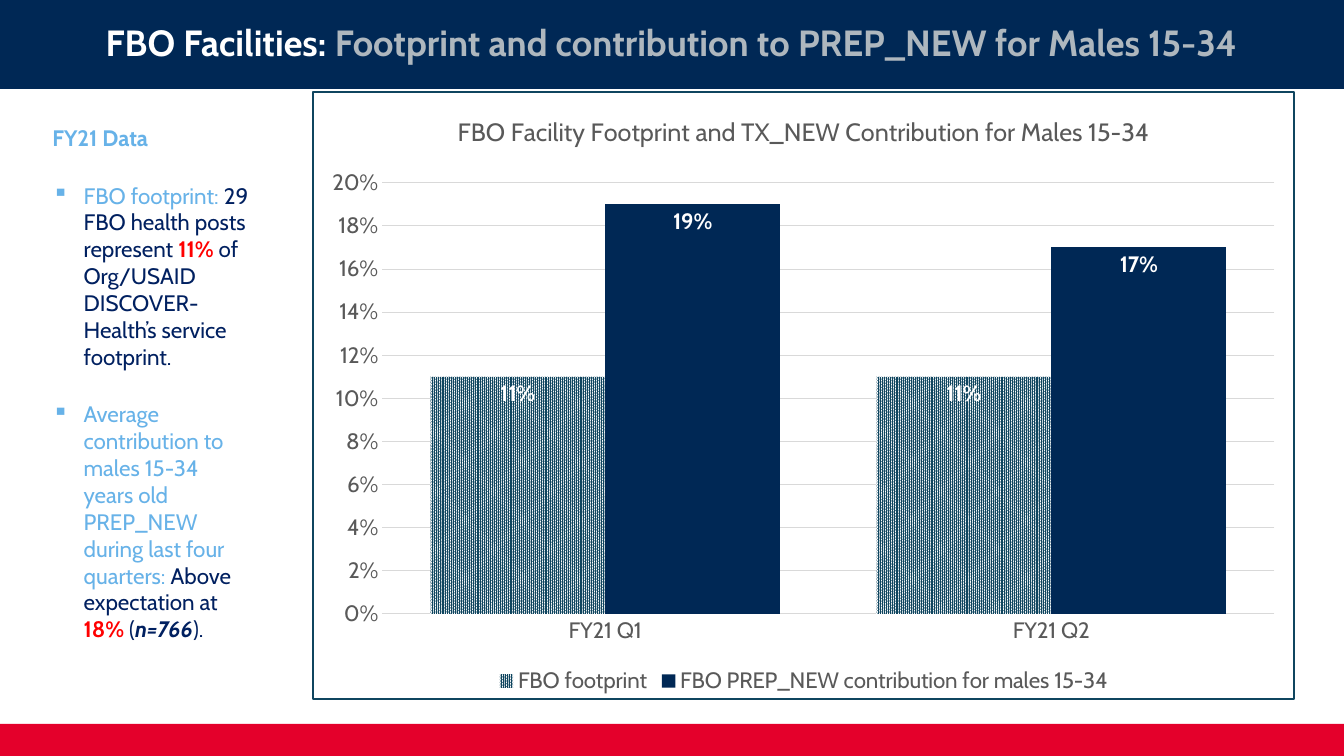
from lxml import etree
from pptx import Presentation
from pptx.chart.data import CategoryChartData
from pptx.dml.color import RGBColor
from pptx.enum.chart import XL_CHART_TYPE, XL_LABEL_POSITION, XL_LEGEND_POSITION, XL_TICK_MARK
from pptx.enum.dml import MSO_PATTERN
from pptx.enum.shapes import MSO_SHAPE
from pptx.enum.text import MSO_ANCHOR, PP_ALIGN
from pptx.oxml import parse_xml
from pptx.oxml.ns import nsdecls, qn
from pptx.util import Cm, Pt

FONT = "Cabin"
WHITE, NAVY, RED, TEAL = "FFFFFF", "002855", "E4002B", "0F455F"
SKY, INK, ALERT = "67B2E8", "002060", "FF0000"
SILVER, GRID, LABEL = "AEB7BE", "D9D9D9", "595959"


def rgb(value):
    return RGBColor.from_string(value)


def style_font(font, size, color, bold=False, italic=False):
    font.name = FONT
    font.size = Pt(size)
    font.color.rgb = rgb(color)
    font.bold = bold
    font.italic = italic


def add_runs(paragraph, size, runs):
    """Each run is (text, colour, then optionally bold and italic)."""
    for text, *style in runs:
        run = paragraph.add_run()
        run.text = text
        style_font(run.font, size, *style)


def add_band(slide, top, height, color):
    band = slide.shapes.add_shape(MSO_SHAPE.RECTANGLE, 0, top, Cm(33.87), height)
    band.shadow.inherit = False
    band.fill.solid()
    band.fill.fore_color.rgb = rgb(color)
    band.line.fill.background()
    return band


def add_header(slide):
    frame = add_band(slide, Cm(-0.1), Cm(2.34), NAVY).text_frame
    frame.word_wrap = True
    frame.vertical_anchor = MSO_ANCHOR.MIDDLE
    heading = frame.paragraphs[0]
    heading.alignment = PP_ALIGN.CENTER
    add_runs(heading, 26, [
        ("FBO Facilities: ", WHITE, True),
        ("Footprint and contribution to PREP_NEW for Males 15-34", SILVER, True),
    ])


def add_bullet(paragraph):
    properties = paragraph._p.get_or_add_pPr()
    properties.set("marL", str(Cm(0.79)))
    properties.set("indent", str(-Cm(0.79)))
    etree.SubElement(properties, qn("a:buChar")).set("char", "▪")


def add_findings(slide, heading, findings):
    frame = slide.shapes.add_textbox(Cm(1.07), Cm(3), Cm(5.51), Cm(12.78)).text_frame
    frame.word_wrap = True
    add_runs(frame.paragraphs[0], 16, [(heading, SKY, True)])
    for finding in findings:
        paragraph = frame.add_paragraph()
        add_bullet(paragraph)
        add_runs(paragraph, 16, finding)
    for paragraph in frame.paragraphs:
        paragraph.space_after = Pt(22)


def style_axis(axis):
    axis.major_tick_mark = axis.minor_tick_mark = XL_TICK_MARK.NONE
    style_font(axis.tick_labels.font, 16, LABEL)


def style_line(line, color, width):
    line.color.rgb = rgb(color)
    line.width = Pt(width)


def add_border(chart):
    chart._chartSpace.find(qn("c:chart")).addnext(parse_xml(
        f'<c:spPr {nsdecls("c", "a")}>'
        f'<a:solidFill><a:srgbClr val="{WHITE}"/></a:solidFill>'
        f'<a:ln w="{Pt(1.5)}"><a:solidFill><a:srgbClr val="{TEAL}"/></a:solidFill></a:ln>'
        '</c:spPr>'))


def place_plot(chart, x, y, w, h):
    """Fix the inner plot area as fractions of the chart."""
    area = chart._chartSpace.find(".//" + qn("c:plotArea"))
    for old in area.findall(qn("c:layout")):
        area.remove(old)
    sizes = "".join(f'<c:{name} val="{value}"/>'
                    for name, value in zip("xywh", (x, y, w, h)))
    area.insert(0, parse_xml(
        f'<c:layout {nsdecls("c")}><c:manualLayout><c:layoutTarget val="inner"/>'
        f'<c:xMode val="edge"/><c:yMode val="edge"/>{sizes}</c:manualLayout></c:layout>'))


def add_contribution_chart(slide):
    data = CategoryChartData(number_format="0%")
    data.categories = ["FY21 Q1", "FY21 Q2"]
    data.add_series("FBO footprint", [0.11, 0.11])
    data.add_series("FBO PREP_NEW contribution for males 15-34", [0.19, 0.17])
    chart = slide.shapes.add_chart(
        XL_CHART_TYPE.COLUMN_CLUSTERED,
        Cm(7.87), Cm(2.29), Cm(24.77), Cm(15.34), data).chart
    style_font(chart.font, 16, LABEL)
    add_border(chart)
    place_plot(chart, 0.07, 0.15, 0.91, 0.71)

    add_runs(chart.chart_title.text_frame.paragraphs[0], 18, [
        ("FBO Facility Footprint and TX_NEW Contribution for Males 15-34", LABEL)])
    chart.chart_title.include_in_layout = False
    chart.has_legend = True
    chart.legend.position = XL_LEGEND_POSITION.BOTTOM
    chart.legend.include_in_layout = False
    style_font(chart.legend.font, 16, LABEL)

    quarters, share = chart.category_axis, chart.value_axis
    style_axis(quarters)
    style_line(quarters.format.line, GRID, 0.75)
    style_axis(share)
    share.format.line.fill.background()
    style_line(share.major_gridlines.format.line, GRID, 0.75)
    share.minimum_scale, share.maximum_scale, share.major_unit = 0, 0.2, 0.02
    share.tick_labels.number_format = "0%"
    share.tick_labels.number_format_is_linked = False

    plot = chart.plots[0]
    plot.gap_width = 55
    plot.overlap = 0
    plot.vary_by_categories = False
    footprint, contribution = plot.series
    hatch = footprint.format.fill
    hatch.patterned()
    hatch.pattern = MSO_PATTERN.PERCENT_90
    hatch.fore_color.rgb = rgb(TEAL)
    hatch.back_color.rgb = rgb(WHITE)
    contribution.format.fill.solid()
    contribution.format.fill.fore_color.rgb = rgb(NAVY)
    for series in plot.series:
        series.invert_if_negative = False
        labels = series.data_labels
        labels.show_value = True
        labels.position = XL_LABEL_POSITION.INSIDE_END
        labels.number_format = "0%"
        labels.number_format_is_linked = False
        style_font(labels.font, 16, WHITE, True)


def main():
    deck = Presentation()
    deck.slide_width, deck.slide_height = Cm(33.87), Cm(19.05)
    slide = deck.slides.add_slide(deck.slide_layouts[6])
    add_band(slide, Cm(18.24), Cm(0.81), RED)
    add_findings(slide, "FY21 Data", [
        [("FBO footprint: ", SKY),
         ("29 FBO health posts represent ", INK),
         ("11% ", ALERT, True),
         ("of Org/USAID DISCOVER-Health’s service footprint.", INK)],
        [("Average contribution to males 15-34 years old PREP_NEW "
          "during last four quarters: ", SKY),
         ("Above expectation at ", INK),
         ("18% ", ALERT, True),
         ("(", INK),
         ("n=766", INK, True, True),
         (").", INK)],
    ])
    add_header(slide)
    add_contribution_chart(slide)
    deck.save("out.pptx")


if __name__ == "__main__":
    main()
